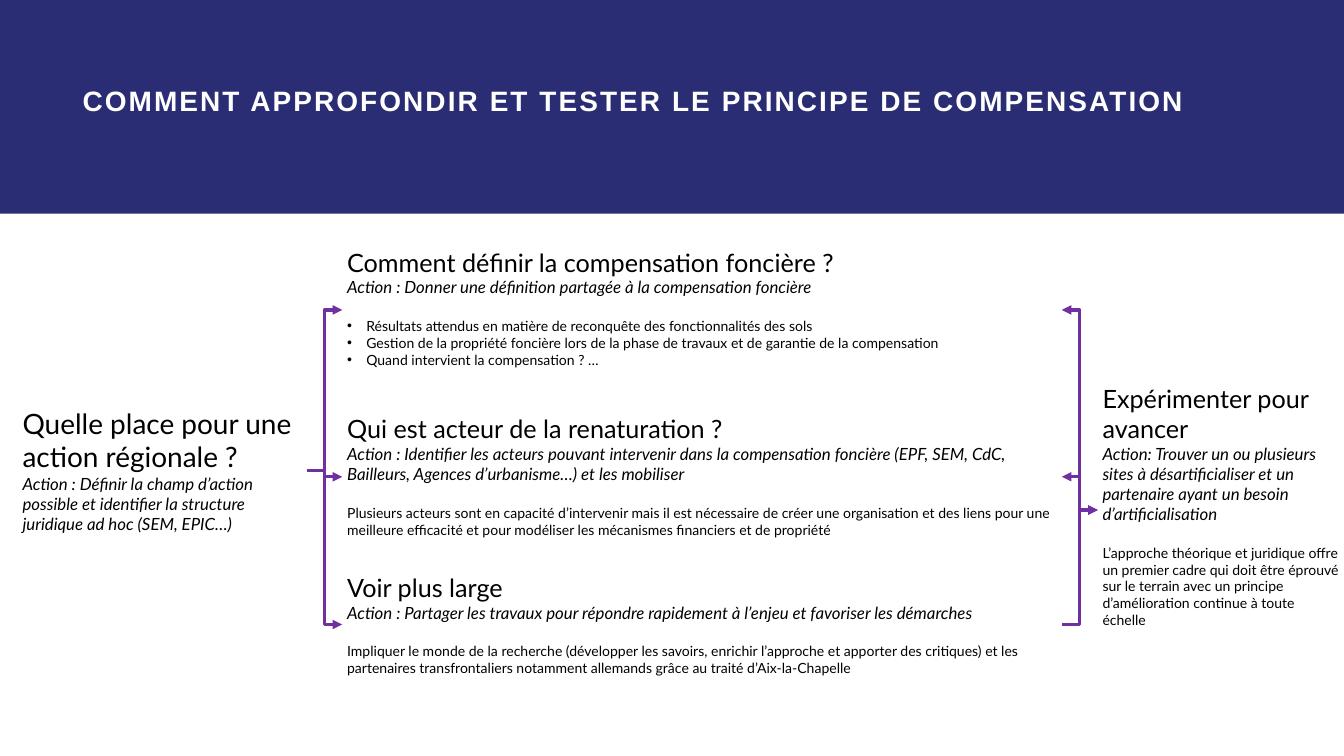
"""Build the slide on testing the land compensation principle."""
from lxml.etree import SubElement
from pptx import Presentation
from pptx.dml.color import RGBColor
from pptx.enum.shapes import MSO_CONNECTOR, MSO_SHAPE
from pptx.enum.text import MSO_AUTO_SIZE
from pptx.oxml.ns import qn
from pptx.util import Inches, Pt

NAVY, PURPLE, WHITE, BLACK = "2B2D74", "7030A0", "FFFFFF", "000000"
TITLE = "COMMENT APPROFONDIR ET TESTER LE PRINCIPE DE COMPENSATION"
MID_X, MID_W = 6.79, 14.28
BLOCKS = [
    dict(box=(0.35, 8.01, 5.73, 2.66), size=40,
         head="Quelle place pour une action régionale ?",
         action="Action : Définir la champ d’action possible et identifier la structure "
                "juridique ad hoc (SEM, EPIC…)",
         body=[], bullets=False),
    dict(box=(MID_X, 4.85, MID_W, 2.59), size=36,
         head="Comment définir la compensation foncière ?",
         action="Action : Donner une définition partagée à la compensation foncière",
         body=["Résultats attendus en matière de reconquête des fonctionnalités des sols",
               "Gestion de la propriété foncière lors de la phase de travaux et de garantie "
               "de la compensation",
               "Quand intervient la compensation ? …"], bullets=True),
    dict(box=(MID_X, 8.16, MID_W, 2.59), size=36,
         head="Qui est acteur de la renaturation ?",
         action="Action : Identifier les acteurs pouvant intervenir dans la compensation "
                "foncière (EPF, SEM, CdC, Bailleurs, Agences d’urbanisme…) et les mobiliser",
         body=["Plusieurs acteurs sont en capacité d’intervenir mais il est nécessaire de "
               "créer une organisation et des liens pour une meilleure efficacité et pour "
               "modéliser les mécanismes financiers et de propriété"], bullets=False),
    dict(box=(MID_X, 11.3, MID_W, 2.19), size=36,
         head="Voir plus large",
         action="Action : Partager les travaux pour répondre rapidement à l’enjeu et "
                "favoriser les démarches",
         body=["Impliquer le monde de la recherche (développer les savoirs, enrichir "
               "l’approche et apporter des critiques) et les partenaires transfrontaliers "
               "notamment allemands grâce au traité d’Aix-la-Chapelle"], bullets=False),
    dict(box=(21.78, 7.55, 4.93, 5.15), size=36,
         head="Expérimenter pour avancer",
         action="Action: Trouver un ou plusieurs sites à désartificialiser et un partenaire "
                "ayant un besoin d’artificialisation",
         body=["L’approche théorique et juridique offre un premier cadre qui doit être "
               "éprouvé sur le terrain avec un principe d’amélioration continue à toute "
               "échelle"], bullets=False),
]
LEFT_END, RIGHT_END = (6.09, 9.34), (21.78, 10.12)
LINKS = [(6.15, ("head", "tail")), (9.46, ("head", "tail")), (12.39, ("tail",))]


def rgb(color):
    return RGBColor.from_string(color)


def style(p, size, color=BLACK, font="Lato", bold=False, italic=False):
    for r in p.runs:
        f = r.font
        f.name, f.size, f.bold, f.italic = font, Pt(size), bold, italic
        f.color.rgb = rgb(color)


def add_box(s, box):
    tf = s.shapes.add_textbox(*map(Inches, box)).text_frame
    tf.word_wrap = True
    return tf


def add_bullet(p):
    pPr = p._p.get_or_add_pPr()
    pPr.set("marL", str(Inches(0.38)))
    pPr.set("indent", str(-Inches(0.38)))
    SubElement(pPr, qn("a:buFont")).set("typeface", "Arial")
    SubElement(pPr, qn("a:buChar")).set("char", "•")


def add_block(s, block):
    tf = add_box(s, block["box"])
    tf.auto_size = MSO_AUTO_SIZE.SHAPE_TO_FIT_TEXT
    tf.text = "\n".join([block["head"], block["action"], *block["body"]])
    head, action, *body = tf.paragraphs
    style(head, block["size"])
    style(action, 24, italic=True)
    for p in body:
        if block["bullets"]:
            add_bullet(p)
        style(p, 20)
    if body:
        body[0].space_before = Pt(28.8)


def add_link(s, start, end, arrows):
    c = s.shapes.add_connector(MSO_CONNECTOR.ELBOW, *map(Inches, start + end))
    c.line.color.rgb = rgb(PURPLE)
    c.line.width = Pt(4.5)
    ln = c.line._get_or_add_ln()
    for side in arrows:
        SubElement(ln, qn(f"a:{side}End")).set("type", "triangle")
    SubElement(c._element.spPr, qn("a:effectLst"))


def main():
    prs = Presentation()
    prs.slide_width, prs.slide_height = Inches(26.67), Inches(15)
    s = prs.slides.add_slide(prs.slide_layouts[6])

    band = s.shapes.add_shape(MSO_SHAPE.RECTANGLE, 0, 0, prs.slide_width, Inches(4.24))
    band.shadow.inherit = False
    band.fill.solid()
    band.fill.fore_color.rgb = rgb(NAVY)
    band.line.fill.background()

    tf = add_box(s, (1.54, 1.61, 23.6, 2.23))
    tf.text = TITLE
    style(tf.paragraphs[0], 40, WHITE, "Arial", bold=True)
    tf.paragraphs[0].runs[0].font._element.set("spc", "300")

    for block in BLOCKS:
        add_block(s, block)
    for y, right_arrows in LINKS:
        add_link(s, LEFT_END, (MID_X, y), ("tail",))
        add_link(s, (MID_X + MID_W, y), RIGHT_END, right_arrows)

    prs.save("out.pptx")


if __name__ == "__main__":
    main()
